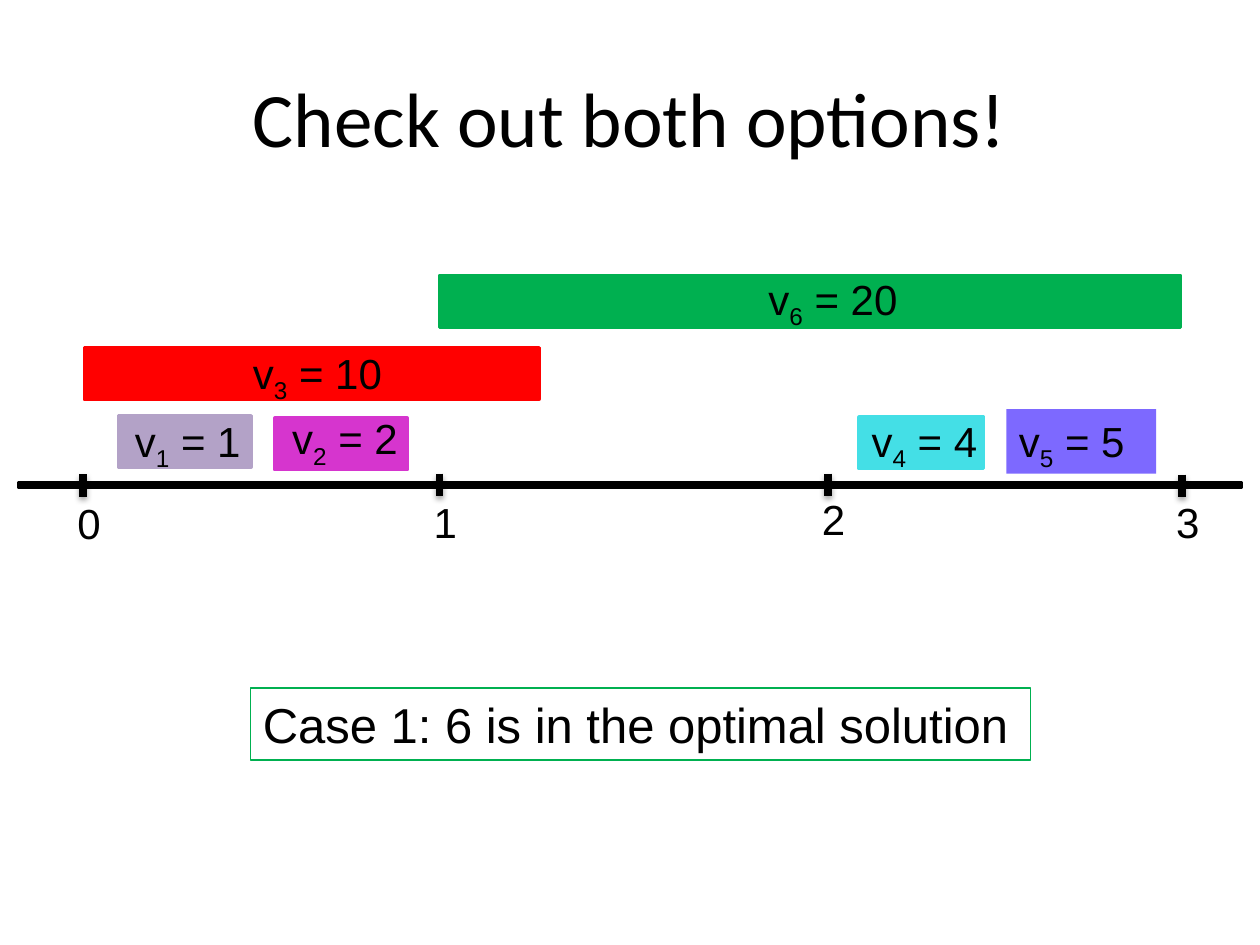
import pptx
import pptx.dml.color
import pptx.enum.shapes
import pptx.enum.text
import pptx.oxml
import pptx.oxml.ns
import pptx.util

Cm, Pt = pptx.util.Cm, pptx.util.Pt
RECTANGLE = pptx.enum.shapes.MSO_SHAPE.RECTANGLE
STRAIGHT = pptx.enum.shapes.MSO_CONNECTOR.STRAIGHT
ANCHOR = pptx.enum.text.MSO_ANCHOR
ALIGN = pptx.enum.text.PP_ALIGN

# Bars: index, value, colour, box, then label left, top and width in the box
BARS = [
    (3, 10, "FF0000", (1.70, 7.01, 9.17, 1.04), (3.15, -0.13, 3.66)),
    (6, 20, "00B050", (8.86, 5.56, 14.94, 1.04), (6.38, -0.18, 3.35)),
    (1, 1, "B3A2C7", (2.39, 8.38, 2.67, 1.04), (0.08, -0.13, 3.07)),
    (2, 2, "D635CE", (5.54, 8.43, 2.67, 1.04), (0.1, -0.23, 3.07)),
    (4, 4, "44DFE6", (17.32, 8.41, 2.51, 1.04), (0, -0.16, 2.84)),
]
# Ticks: centre and top, then top of the number below
TICKS = [(1.68, 9.56, 9.91), (8.86, 9.55, 9.88), (16.69, 9.55, 9.83), (23.83, 9.57, 9.88)]
TICK_SHADOW = (
    '<a:effectLst %s><a:outerShdw blurRad="40000" dist="23000" dir="5400000" rotWithShape="0">'
    '<a:srgbClr val="000000"><a:alpha val="35000"/></a:srgbClr></a:outerShdw></a:effectLst>'
    % pptx.oxml.ns.nsdecls("a")
)


def colour(value):
    return pptx.dml.color.RGBColor.from_string(value)


def add_run(paragraph, text, size=24, name="Arial", subscript=False):
    run = paragraph.add_run()
    run.text = text
    run.font.size = Pt(size)
    run.font.name = name
    run.font.color.rgb = colour("000000")
    if subscript:
        run._r.get_or_add_rPr().set("baseline", "-25000")


def prepare_text(shape):
    frame = shape.text_frame
    frame.word_wrap = True
    frame.vertical_anchor = ANCHOR.TOP
    frame.paragraphs[0].alignment = ALIGN.LEFT
    return frame.paragraphs[0]


def add_text_box(slide, left, top, width, height):
    return prepare_text(slide.shapes.add_textbox(Cm(left), Cm(top), Cm(width), Cm(height)))


def add_rectangle(slide, box, fill=None, line=None, line_width=2):
    shape = slide.shapes.add_shape(RECTANGLE, *map(Cm, box))
    shape.shadow.inherit = False
    if fill:
        shape.fill.solid()
        shape.fill.fore_color.rgb = colour(fill)
    else:
        shape.fill.background()
    if line:
        shape.line.color.rgb = colour(line)
        shape.line.width = Pt(line_width)
    else:
        shape.line.fill.background()
    return shape


def add_value(paragraph, index, value):
    add_run(paragraph, "v")
    add_run(paragraph, str(index), subscript=True)
    add_run(paragraph, f" = {value}")


def add_title(slide, box, text):
    title = slide.shapes.title
    title.left, title.top, title.width, title.height = map(Cm, box)
    title.text_frame.vertical_anchor = ANCHOR.MIDDLE
    paragraph = title.text_frame.paragraphs[0]
    paragraph.alignment = ALIGN.CENTER
    add_run(paragraph, text, 44, "Calibri")


def add_bar(slide, box, index, value, fill, label):
    add_rectangle(slide, box, fill, fill)
    left, top, width = label
    paragraph = add_text_box(slide, box[0] + left, box[1] + top, width, 1.3)
    add_value(paragraph, index, value)


def add_axis(slide, box):
    add_rectangle(slide, box, "000000", "000000")
    for number, (center, top, label_top) in enumerate(TICKS):
        tick = slide.shapes.add_connector(STRAIGHT, Cm(center), Cm(top), Cm(center), Cm(top + 0.45))
        tick.line.color.rgb = colour("000000")
        tick.line.width = Pt(4.5)
        tick._element.spPr.append(pptx.oxml.parse_xml(TICK_SHADOW))
        add_run(add_text_box(slide, center - 0.37, label_top, 0.69, 0.97), str(number))


def add_case(slide, box, text):
    shape = add_rectangle(slide, box, line="00B050", line_width=0.75)
    add_run(prepare_text(shape), text, 28)


def main():
    presentation = pptx.Presentation()
    presentation.slide_width, presentation.slide_height = Cm(25.4), Cm(19.05)
    slide = presentation.slides.add_slide(presentation.slide_layouts[5])

    add_title(slide, (1.27, 0.76, 22.86, 3.18), "Check out both options!")

    # Weighted intervals
    for index, value, fill, box, label in BARS:
        add_bar(slide, box, index, value, fill, label)
    fifth = add_rectangle(slide, (20.29, 8.25, 3.02, 1.3), "7D69FF")
    add_value(prepare_text(fifth), 5, 5)

    # Time line and conclusion
    add_axis(slide, (0.38, 9.73, 24.64, 0.1))
    add_case(slide, (5.05, 13.87, 15.72, 1.45), "Case 1: 6 is in the optimal solution")
    presentation.save("out.pptx")


if __name__ == "__main__":
    main()
